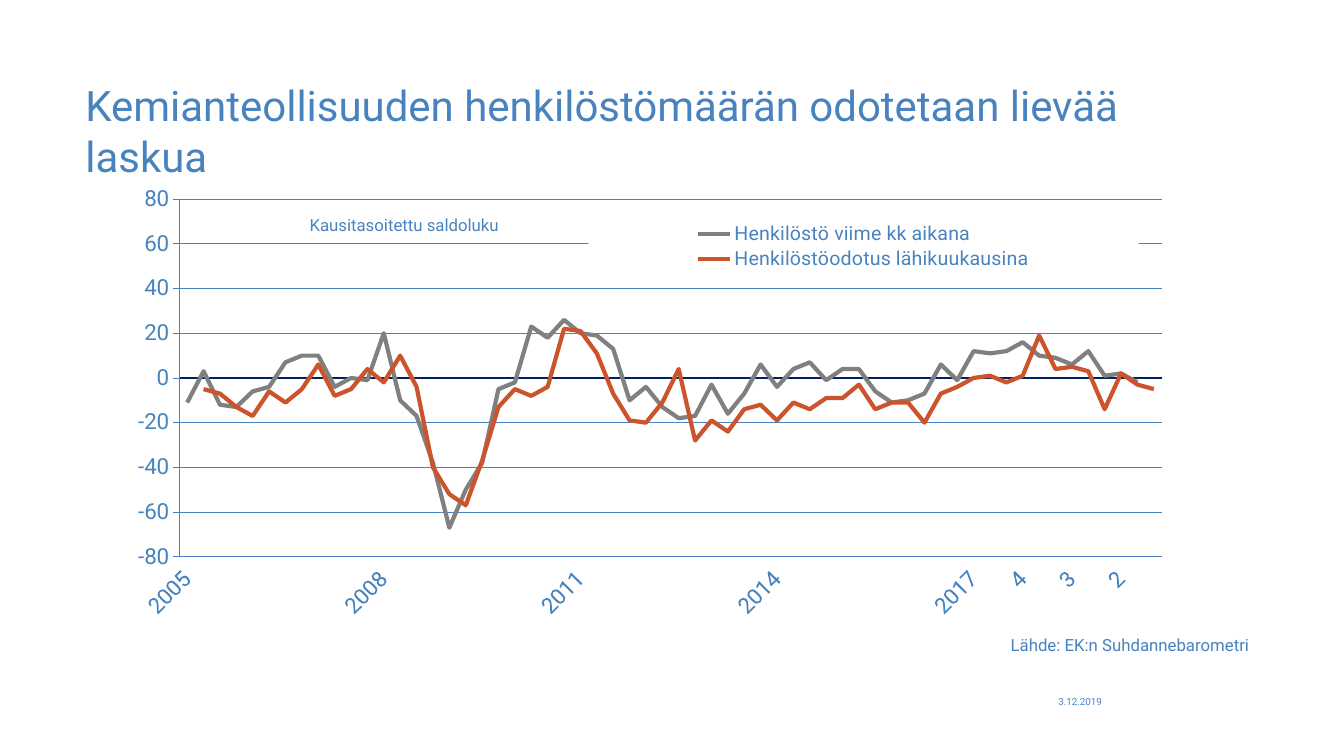
from pptx import Presentation
from pptx.chart.data import CategoryChartData
from pptx.dml.color import RGBColor
from pptx.enum.chart import XL_CHART_TYPE as ChartType
from pptx.enum.chart import XL_LEGEND_POSITION as LegendPosition
from pptx.enum.chart import XL_MARKER_STYLE as MarkerStyle
from pptx.enum.chart import XL_TICK_LABEL_POSITION as LabelPosition
from pptx.enum.chart import XL_TICK_MARK as TickMark
from pptx.enum.text import MSO_ANCHOR as Anchor
from pptx.enum.text import PP_ALIGN as Align
from pptx.oxml import parse_xml
from pptx.oxml.ns import nsdecls, qn
from pptx.util import Pt

FONT = "Roboto"
BLUE = "4883BE"
NAVY = "002060"
NEXT_QUARTERS = ["2", "3", "4"]
LABEL_STEP = 3

RECENT_STAFF = [
    -11, 3, -12, -13, -6, -4, 7, 10, 10, -4, 0, -1, 20, -10, -17, -38, -67, -50, -38, -5,
    -2, 23, 18, 26, 20, 19, 13, -10, -4, -13, -18, -17, -3, -16, -7, 6, -4, 4, 7, -1,
    4, 4, -6, -11, -10, -7, 6, -1, 12, 11, 12, 16, 10, 9, 6, 12, 1, 2, -2, None,
]
EXPECTED_STAFF = [
    None, -5, -7, -13, -17, -6, -11, -5, 6, -8, -5, 4, -2, 10, -4, -40, -52, -57, -37, -13,
    -5, -8, -4, 22, 21, 11, -7, -19, -20, -11, 4, -28, -19, -24, -14, -12, -19, -11, -14, -9,
    -9, -3, -14, -11, -11, -20, -7, -4, 0, 1, -2, 1, 19, 4, 5, 3, -14, 2, -3, -5,
]
SERIES = [
    ("Henkilöstö viime kk aikana", RECENT_STAFF, "808080"),
    ("Henkilöstöodotus lähikuukausina", EXPECTED_STAFF, "CC542C"),
]


def color(hex_value):
    return RGBColor.from_string(hex_value)


def style_font(font, size):
    font.name = FONT
    font.size = Pt(size)
    font.bold = False
    font.color.rgb = color(BLUE)


def style_line(line, hex_value, width):
    line.color.rgb = color(hex_value)
    line.width = Pt(width)


def add_text(slide, text, box, size, align=Align.LEFT, anchor=Anchor.TOP,
             margins=(0, 0, 0, 0), wrap=True):
    """Box is left, top, width, height; margins are left, top, right, bottom."""
    shape = slide.shapes.add_textbox(*map(Pt, box))
    frame = shape.text_frame
    frame.word_wrap = wrap
    frame.vertical_anchor = anchor
    frame.margin_left, frame.margin_top, frame.margin_right, frame.margin_bottom = map(Pt, margins)
    frame.text = text
    paragraph = frame.paragraphs[0]
    paragraph.alignment = align
    style_font(paragraph.runs[0].font, size)


def quarter_labels():
    """Number the later quarters only from 2017 on."""
    labels = []
    for year in range(2005, 2020):
        labels += [str(year)] + (NEXT_QUARTERS if year >= 2017 else [""] * 3)
    return labels


def manual_layout(x, y, width, height, inner=False):
    """Lengths are shares of the chart's own size."""
    target = '<c:layoutTarget val="inner"/>' if inner else ""
    return parse_xml(
        f'<c:layout {nsdecls("c")}><c:manualLayout>{target}'
        '<c:xMode val="edge"/><c:yMode val="edge"/>'
        f'<c:x val="{x}"/><c:y val="{y}"/><c:w val="{width}"/><c:h val="{height}"/>'
        '</c:manualLayout></c:layout>')


def set_layout(parent, index, layout):
    for old_layout in parent.findall(qn("c:layout")):
        parent.remove(old_layout)
    parent.insert(index, layout)


def style_category_axis(axis):
    axis.tick_label_position = LabelPosition.LOW
    axis.major_tick_mark = axis.minor_tick_mark = TickMark.NONE
    axis.has_major_gridlines = False
    style_line(axis.format.line, NAVY, 2)
    style_font(axis.tick_labels.font, 16)
    element = axis._element
    element.find(qn("c:txPr")).find(qn("a:bodyPr")).set("rot", "-2700000")
    element.find(qn("c:noMultiLvlLbl")).addprevious(
        parse_xml(f'<c:tickLblSkip {nsdecls("c")} val="{LABEL_STEP}"/>'))


def style_value_axis(axis):
    axis.minimum_scale, axis.maximum_scale, axis.major_unit = -80, 80, 20
    axis.major_tick_mark, axis.minor_tick_mark = TickMark.OUTSIDE, TickMark.NONE
    axis.has_major_gridlines = True
    style_line(axis.major_gridlines.format.line, BLUE, 0.5)
    style_line(axis.format.line, BLUE, 0.5)
    style_font(axis.tick_labels.font, 16)


def style_legend(chart):
    chart.has_legend = True
    legend = chart.legend
    legend.position = LegendPosition.RIGHT
    legend.include_in_layout = False
    style_font(legend.font, 14)
    element = legend._element
    set_layout(element, 1, manual_layout(0.43, 0.09, 0.47, 0.12))
    element.find(qn("c:overlay")).addnext(parse_xml(
        f'<c:spPr {nsdecls("c", "a")}><a:solidFill><a:srgbClr val="FFFFFF"/></a:solidFill>'
        '<a:ln><a:noFill/></a:ln></c:spPr>'))


def add_line_chart(slide, box):
    data = CategoryChartData()
    data.categories = quarter_labels()
    for name, values, _ in SERIES:
        data.add_series(name, values)
    chart = slide.shapes.add_chart(ChartType.LINE, *map(Pt, box), data).chart
    chart.has_title = False
    style_font(chart.font, 18)
    plot = chart.plots[0]
    plot.vary_by_categories = False
    for series, (_, _, line_color) in zip(plot.series, SERIES):
        series.smooth = False
        series.marker.style = MarkerStyle.NONE
        style_line(series.format.line, line_color, 3)
    style_category_axis(chart.category_axis)
    style_value_axis(chart.value_axis)
    style_legend(chart)
    plot_area = chart._chartSpace.chart.plotArea
    set_layout(plot_area, 0, manual_layout(0.08, 0.04, 0.84, 0.83, inner=True))


def main():
    presentation = Presentation()
    presentation.slide_width, presentation.slide_height = Pt(960), Pt(540)
    slide = presentation.slides.add_slide(presentation.slide_layouts[6])
    add_line_chart(slide, (61, 130, 836, 312))
    add_text(slide, "Lähde: EK:n Suhdannebarometri", (502.5, 447, 393, 27), 12,
             Align.RIGHT, Anchor.MIDDLE, (0, 1.5, 3, 1.5))
    add_text(slide, "3.12.2019", (741, 497, 61, 14), 7, Align.CENTER)
    add_text(slide, "Kemianteollisuuden henkilöstömäärän odotetaan lievää laskua",
             (61, 57, 835, 70.5), 30, margins=(0, 0, 3, 0))
    add_text(slide, "Kausitasoitettu saldoluku", (214, 150, 150.5, 21.5), 12,
             margins=(7.2, 3.6, 7.2, 3.6), wrap=False)
    presentation.save("out.pptx")


if __name__ == "__main__":
    main()
